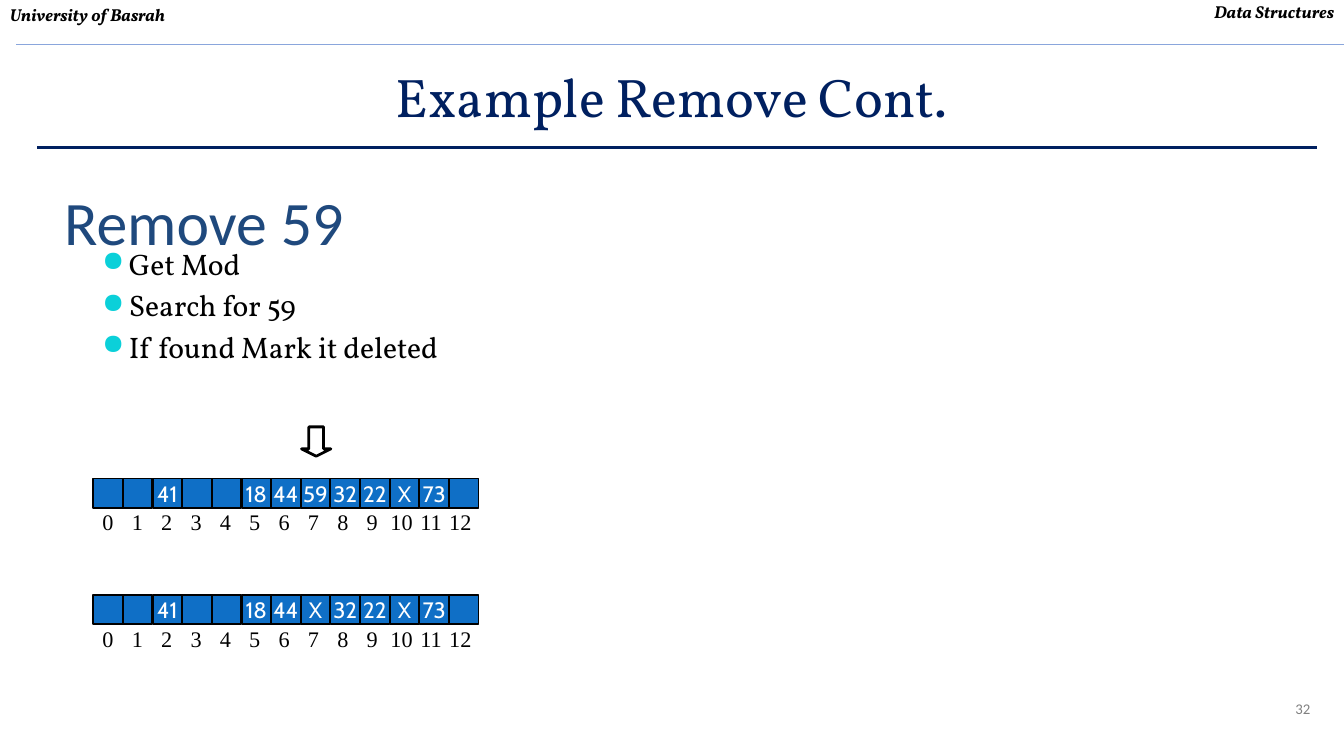
"""Build the hash table removal slide."""
from lxml import etree
from pptx import Presentation, util as u
from pptx.dml.color import RGBColor
from pptx.enum import shapes, text
from pptx.oxml.ns import qn

INK, NAVY, BLUE = "000000", "002060", "0F6FC6"
LEFT, MID, RIGHT = text.PP_ALIGN.LEFT, text.PP_ALIGN.CENTER, text.PP_ALIGN.RIGHT
TOP, CORE, BASE = text.MSO_ANCHOR.TOP, text.MSO_ANCHOR.MIDDLE, text.MSO_ANCHOR.BOTTOM


def tint(code):
    return RGBColor.from_string(code)


def write(shape, lines, face, size, color, align=LEFT, anchor=TOP, wrap=True, **style):
    frame = shape.text_frame
    frame.word_wrap, frame.vertical_anchor = wrap, anchor
    frame.text = lines
    for para in frame.paragraphs:
        para.alignment = align
        for run in para.runs:
            for key, value in {"name": face, "size": u.Pt(size), **style}.items():
                setattr(run.font, key, value)
            run.font.color.rgb = tint(color)
    return frame


deck = Presentation()
deck.slide_width, deck.slide_height = u.Inches(15.11), u.Inches(8.5)
slide = deck.slides.add_slide(deck.slide_layouts[6])
parts = slide.shapes

for start, end, y, color, width in [
    (0.18, 15.11, 0.5, "8AA6DC", 1.5),
    (0.42, 14.81, 1.66, NAVY, 2),
]:
    rule = parts.add_connector(shapes.MSO_CONNECTOR.STRAIGHT, *map(u.Inches, (start, y, end, y)))
    rule.line.color.rgb, rule.line.width = tint(color), u.Pt(width)
    etree.SubElement(rule._element.spPr, qn("a:effectLst"))

head = {"bold": True, "italic": True}
for box, words, face, size, color, align, anchor, style in [
    ((0, -0.03, 15.1, 0.34), "Data Structures", "Vollkorn", 14, INK, RIGHT, TOP, head),
    ((0.01, 0, 7.85, 0.34), "University of Basrah", "Vollkorn", 14, INK, LEFT, TOP, head),
    ((0, 0.5, 15.11, 1.15), "Example Remove Cont.", "Vollkorn", 44, NAVY, MID, CORE, {}),
    ((13.16, 7.82, 1.67, 0.7), "32", "Calibri", 12, "808080", RIGHT, TOP, {}),
]:
    label = parts.add_textbox(*map(u.Inches, box))
    write(label, words, face, size, color, align, anchor, **style)

topic = parts.add_textbox(*map(u.Inches, (0.72, 1.65, 9, 1.25)))
frame = write(topic, "Remove 59", "Calibri", 50, "1F497D", anchor=BASE)
frame.margin_left = frame.margin_right = frame.margin_bottom = 0

steps = parts.add_textbox(*map(u.Inches, (1.05, 2.71, 4.17, 2.42)))
frame = write(steps, "Get Mod\nSearch for 59\nIf found Mark it deleted", "Vollkorn", 24, INK)
for i, para in enumerate(frame.paragraphs):
    para.space_before = u.Pt(4.8 if i else 0)
    props = para._p.get_or_add_pPr()
    props.set("marL", str(u.Inches(0.3)))
    props.set("indent", str(-u.Inches(0.3)))
    hue = etree.SubElement(props, qn("a:buClr"))
    etree.SubElement(hue, qn("a:srgbClr"), val="0BD0D9")
    etree.SubElement(props, qn("a:buSzPct"), val="95000")
    etree.SubElement(props, qn("a:buChar"), char="●")

arrow = parts.add_shape(shapes.MSO_SHAPE.DOWN_ARROW, *map(u.Inches, (3.39, 4.8, 0.33, 0.33)))
arrow.adjustments[0], arrow.adjustments[1] = 0.5, 0.25
arrow.shadow.inherit = False
arrow.fill.background()
arrow.line.color.rgb, arrow.line.width = tint(INK), u.Pt(2.25)

for top, found in [(5.38, "59"), (6.69, "X")]:
    row = ["", "", "41", "", "", "18", "44", found, "32", "22", "X", "73", ""]
    for i, value in enumerate(row):
        cell = parts.add_shape(
            shapes.MSO_SHAPE.RECTANGLE, *map(u.Inches, (1.05 + i / 3, top, 0.33, 0.33)))
        cell.shadow.inherit = False
        cell.fill.solid()
        cell.fill.fore_color.rgb = tint(BLUE)
        cell.line.color.rgb, cell.line.width = tint(INK), u.Pt(1.5)
        if value:
            write(cell, value, "Cabin", 18, "FFFFFF", MID, CORE, False)
    for i in range(len(row)):
        width = 0.33 if i < 10 else 0.45
        left = 1.215 + 0.33 * i - width / 2
        index = parts.add_textbox(*map(u.Inches, (left, top + 0.29, width, 0.4)))
        write(index, str(i), "Times New Roman", 18, INK, MID, wrap=False)

deck.save("out.pptx")
